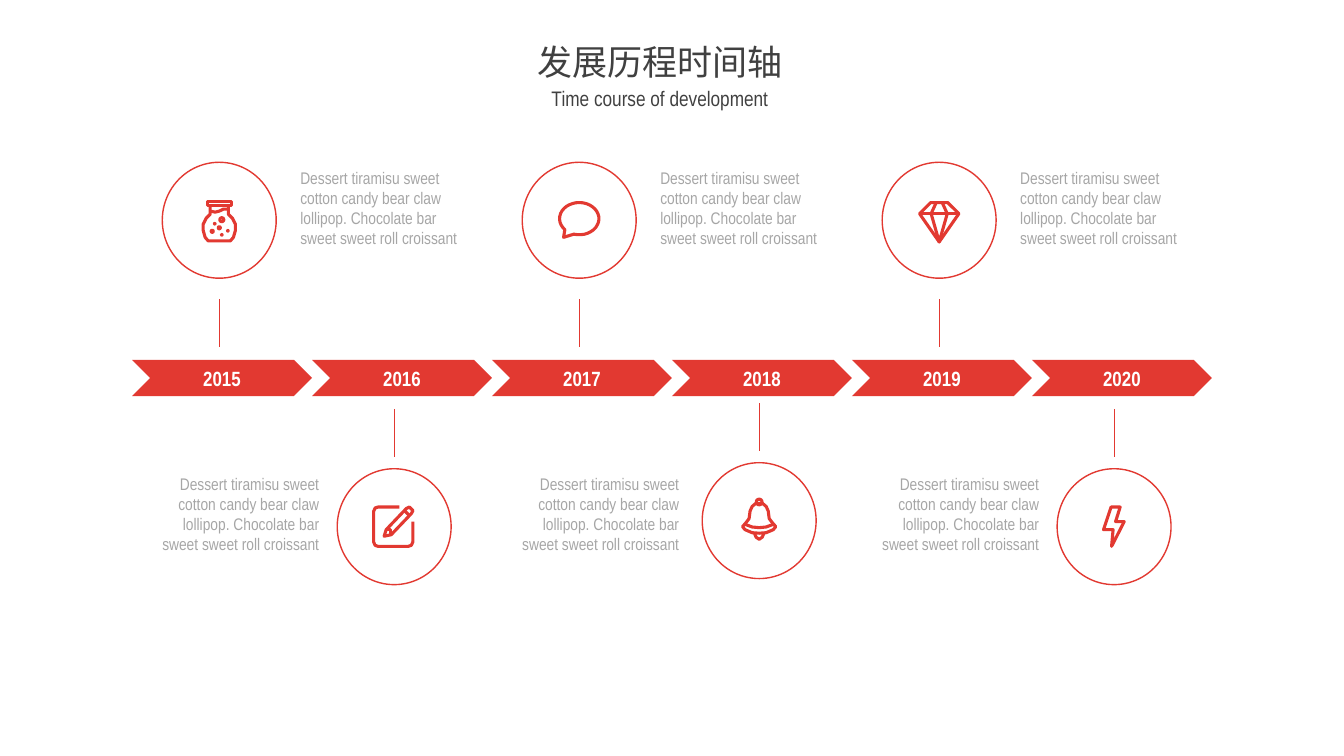
from math import cos, radians, sin

from lxml.etree import SubElement
from pptx import Presentation
from pptx.dml.color import RGBColor as RGB
from pptx.enum.shapes import MSO_CONNECTOR as LINK, MSO_SHAPE as SHAPE
from pptx.enum.text import MSO_ANCHOR as ANCHOR, MSO_AUTO_SIZE as AUTO, PP_ALIGN as ALIGN
from pptx.oxml.ns import qn
from pptx.util import Inches, Pt

COLORS = {"red": "E23931", "dark": "404040", "gray": "A6A6A6", "white": "FFFFFF"}
FONT = "Arial Narrow"
BLURB = ("Dessert tiramisu sweet cotton candy bear claw lollipop. "
         "Chocolate bar sweet sweet roll croissant")
COL, BAND = 1.785, 0.36     # chevron width and height
DISC_W, DISC_H = 1.13, 1.15
UNIT = 0.01                 # inches per icon unit


def color(name):
    return RGB.from_string(COLORS[name])


def arc(x, y, rx, ry, start=0, end=360, steps=32):
    turns = [radians(start + (end - start) * i / steps) for i in range(steps + 1)]
    return [(x + rx * cos(t), y + ry * sin(t)) for t in turns]


def mirror(*half):
    """Complete a left half with its reflection in the vertical axis."""
    return [*half, *((-x, y) for x, y in reversed(half))]


# Each icon is a list of strokes around the centre of its disc: (points, closed).
FLASK = [
    (mirror((-12, -19), (-12, -15)), True),
    (mirror((-9, -15), (-9, -6), (-13, -2), (-16, 4), (-16, 10), (-14, 17), (-11, 20.5)), False),
    ([(-9, -9), (-4, -8), (0, -9), (4, -11), (9, -11)], False),
] + [(arc(x, y, r, r, steps=12), True) for x, y, r in (
    (2.5, -0.5, 2), (0, 7.5, 1), (-7, 11, 1), (8.5, 10.5, 0.3), (2.5, 14.5, 0.3), (-4.5, 3.5, 0.3))]
PENCIL = [
    ([(5, -19.5), (-16, -19.5), (-19, -18.5), (-20.5, -15), (-20.5, 15), (-19, 18.5),
      (-16, 19.5), (14, 19.5), (17, 18.5), (18.5, 15), (18.5, -5)], False),
    ([(-10, 9.5), (-8, 3), (12, -18), (15, -19.5), (18.5, -16), (17, -13), (-3, 8)], True),
    ([(10, -16), (15, -11)], False),
    ([(-8, 3), (-4, 3), (-4, 8)], False),
]
SPEECH = [(arc(0, -1.5, 19.5, 16, 137, 466) + [(-15.5, 17)], True)]
BELL = [
    (arc(0, -18.5, 2.8, 2.8, steps=16), True),
    (mirror((-3.5, -17), (-7, -14), (-9, -9.5), (-10, -2), (-13, 2), (-16.5, 6),
            (-14, 9), (-7, 12), (0, 12.5)), True),
    (mirror((-14.5, 3.5), (-7, 6.3), (0, 7)), False),
    (mirror((-4.5, 13), (-3, 16.5), (0, 18.5)), False),
]
GEM = [
    (mirror((-8.5, -17.5), (-19.5, -6.5), (0, 21.5)), True),
    ([(-19.5, -6.5), (19.5, -6.5)], False),
    (mirror((-3, -17.5), (-8, -6.5), (0, 21.5)), False),
]
BOLT = [([(-3, -19.5), (6, -19.5), (1.5, -5), (10, -5), (-2.5, 19.5), (-1, 3), (-10.5, 3)], True)]

# year, icon, disc offset within its column, upward shift
STEPS = [
    ("2015", FLASK, 0.3, 0), ("2016", PENCIL, 0.25, 0), ("2017", SPEECH, 0.3, 0),
    ("2018", BELL, 0.3, 0.06), ("2019", GEM, 0.3, 0), ("2020", BOLT, 0.25, 0),
]


def write(shape, text, size, tint, align, anchor=ANCHOR.TOP, bold=False):
    frame = shape.text_frame
    frame.text = text
    frame.word_wrap = True
    frame.auto_size = AUTO.NONE
    frame.vertical_anchor = anchor
    para = frame.paragraphs[0]
    para.alignment = align
    para.space_before = Pt(0)
    para.line_spacing = 1.0
    font = para.font
    font.name, font.size, font.bold = FONT, Pt(size), bold
    font.color.rgb = color(tint)


def outline(shape, width):
    shape.shadow.inherit = False
    shape.fill.background()
    shape.line.color.rgb = color("red")
    shape.line.width = Pt(width)


def heading(slide, x, y, width):
    title, sub = slide.shapes.title, slide.placeholders[1]
    parts = ((title, "发展历程时间轴", 25, 0, 0.52),
             (sub, "Time course of development", 15, 0.45, 0.35))
    for shape, text, size, drop, height in parts:
        shape.left, shape.top = Inches(x), Inches(y + drop)
        shape.width, shape.height = Inches(width), Inches(height)
        write(shape, text, size, "dark", ALIGN.CENTER)


def chevron(slide, x, y, year):
    shape = slide.shapes.add_shape(SHAPE.CHEVRON, Inches(x), Inches(y), Inches(COL), Inches(BAND))
    shape.shadow.inherit = False
    shape.fill.solid()
    shape.fill.fore_color.rgb = color("red")
    shape.line.fill.background()
    write(shape, year, 14.7, "white", ALIGN.CENTER, ANCHOR.MIDDLE, True)


def draw(slide, x, y, icon):
    """Draw the icon's strokes as one outline centred on x, y."""
    fine = 10  # points are kept to a tenth of a unit
    strokes = [([(px * fine, py * fine) for px, py in pts], shut) for pts, shut in icon]
    pen = slide.shapes.build_freeform(*strokes[0][0][0], scale=Inches(UNIT) / fine)
    for pts, shut in strokes:
        pen.move_to(*pts[0])
        pen.add_line_segments(pts[1:], close=shut)
    outline(pen.convert_to_shape(Inches(x), Inches(y)), 2.2)


def stem(slide, x, y, length):
    line = slide.shapes.add_connector(LINK.STRAIGHT, Inches(x), Inches(y),
                                      Inches(x), Inches(y + length))
    line.line.color.rgb = color("red")
    line.line.width = Pt(0.75)
    SubElement(line._element.spPr, qn("a:effectLst"))


def pin(slide, x, y, gap, icon):
    """Place a disc with its icon, and a stem that starts at gap from the disc's top."""
    disc = slide.shapes.add_shape(SHAPE.OVAL, Inches(x), Inches(y), Inches(DISC_W), Inches(DISC_H))
    outline(disc, 1)
    mid = x + DISC_W / 2
    draw(slide, mid, y + DISC_H / 2, icon)
    stem(slide, mid, y + gap, 0.47)


def blurb(slide, x, y, align):
    box = slide.shapes.add_textbox(Inches(x), Inches(y), Inches(1.79), Inches(0.91))
    write(box, BLURB, 12, "gray", align)


def timeline(slide, x, y):
    for i, (year, icon, shift, lift) in enumerate(STEPS):
        left = x + i * COL
        chevron(slide, left, y, year)
        if i % 2 == 0:
            top, gap, side, align = y - 1.96, 1.36, 1.57, ALIGN.LEFT
        else:
            top, gap, side, align = y + 1.08, -0.59, -1.62, ALIGN.RIGHT
        pin(slide, left + shift, top - lift, gap, icon)
        blurb(slide, left + side, top, align)


def main():
    deck = Presentation()
    deck.slide_width, deck.slide_height = Inches(13.33), Inches(7.5)
    slide = deck.slides.add_slide(deck.slide_layouts[0])
    heading(slide, 4.34, 0.35, 4.41)
    timeline(slide, 1.31, 3.57)
    deck.save("out.pptx")


if __name__ == "__main__":
    main()
